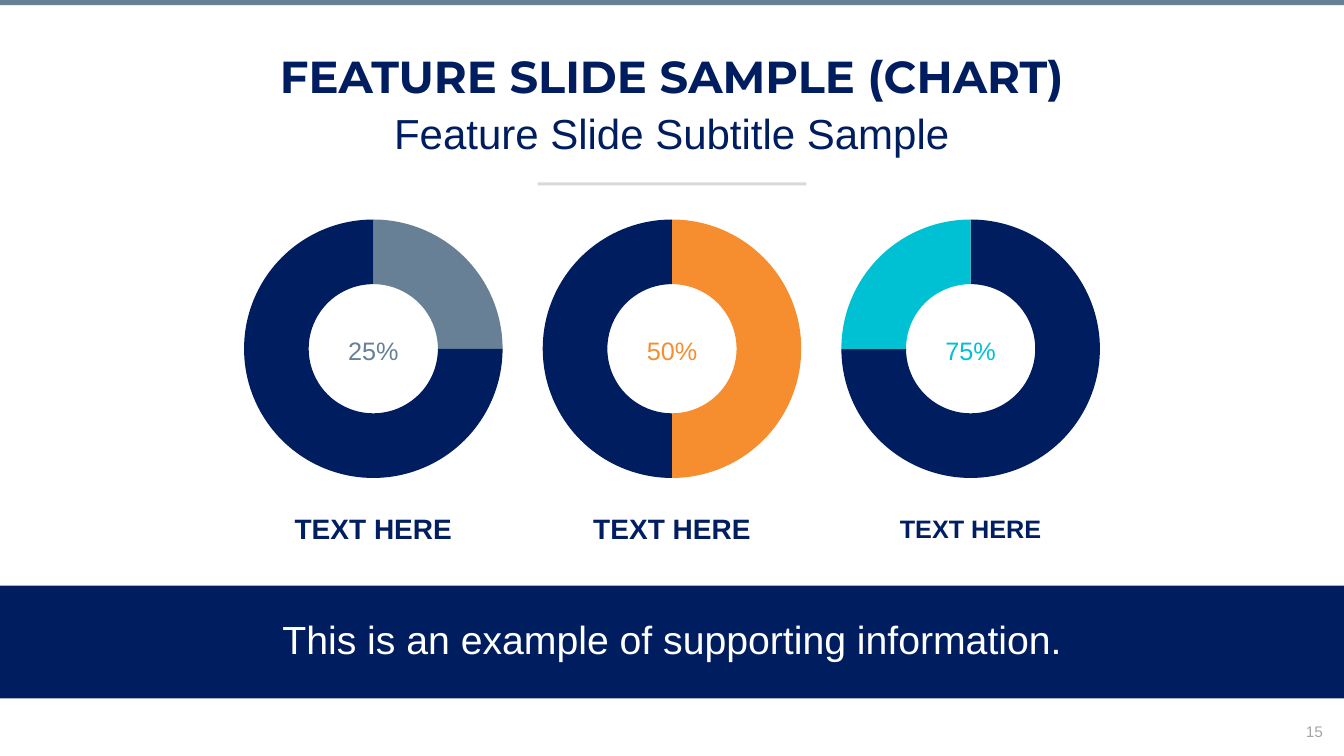
from pptx import Presentation
from pptx.chart.data import CategoryChartData
from pptx.dml.color import RGBColor
from pptx.enum.chart import XL_CHART_TYPE
from pptx.enum.shapes import MSO_SHAPE
from pptx.enum.text import MSO_ANCHOR, PP_ALIGN
from pptx.util import Inches, Pt

DOUGHNUT = XL_CHART_TYPE.DOUGHNUT
RECTANGLE = MSO_SHAPE.RECTANGLE
TOP, MIDDLE = MSO_ANCHOR.TOP, MSO_ANCHOR.MIDDLE
CENTER, RIGHT = PP_ALIGN.CENTER, PP_ALIGN.RIGHT

WIDTH, HEIGHT = 13.33, 7.5
COLUMN = WIDTH / 4.5
FIRST_CENTER = 1.25 * COLUMN
CHART_TOP, CHART_WIDTH, CHART_HEIGHT = 1.32, 2.84, 4.28
HOLE_PERCENT = 35

COLORS = {
    "navy": "001D5F",
    "label": "001E61",
    "slate": "688096",
    "orange": "F68D2E",
    "cyan": "00C1D4",
    "rule": "D9D9D9",
    "number": "A6A6A6",
    "white": "FFFFFF",
    "black": "000000",
}

# Values, slice colours, accent of the percentage, label size
DOUGHNUTS = [
    ((25, 75), ("slate", "navy"), "slate", 20),
    ((50, 50), ("orange", "navy"), "orange", 20),
    ((75, 25), ("navy", "cyan"), "cyan", 18),
]


def color(name):
    return RGBColor.from_string(COLORS[name])


def inches(box):
    return [Inches(length) for length in box]


def centered(center, top, width, height):
    return center - width / 2, top, width, height


def set_font(font, color_name, **values):
    for name, value in {"name": "Arial", **values}.items():
        setattr(font, name, value)
    font.color.rgb = color(color_name)


def write(shape, text, size, color_name, anchor=MIDDLE, bold=False,
          font_name="Arial", **paragraph_format):
    frame = shape.text_frame
    frame.word_wrap = True
    frame.vertical_anchor = anchor
    paragraph = frame.paragraphs[0]
    for name, value in {"alignment": CENTER, **paragraph_format}.items():
        setattr(paragraph, name, value)
    run = paragraph.add_run()
    run.text = text
    set_font(run.font, color_name, name=font_name, size=Pt(size), bold=bold)


def add_text(slide, box, text, size, color_name, **style):
    write(slide.shapes.add_textbox(*inches(box)), text, size, color_name, **style)


def add_bar(slide, box, color_name):
    bar = slide.shapes.add_shape(RECTANGLE, *inches(box))
    bar.shadow.inherit = False
    bar.fill.solid()
    bar.fill.fore_color.rgb = color(color_name)
    bar.line.fill.background()
    return bar


def add_doughnut(slide, box, values, slice_colors):
    data = CategoryChartData()
    data.categories = ["1", "2"]
    data.add_series("Series 1", values)
    chart = slide.shapes.add_chart(DOUGHNUT, *inches(box), data).chart
    chart.has_legend = False
    chart.has_title = False
    set_font(chart.font, "black", size=Pt(10))
    plot = chart.plots[0]
    plot.has_data_labels = False
    plot.vary_by_categories = True
    for index, name in enumerate(slice_colors):
        slice_format = plot.series[0].points[index].format
        slice_format.fill.solid()
        slice_format.fill.fore_color.rgb = color(name)
        slice_format.line.fill.background()
    for hole in chart.element.xpath(".//c:holeSize"):
        hole.set("val", str(HOLE_PERCENT))


def main():
    presentation = Presentation()
    presentation.slide_width = Inches(WIDTH)
    presentation.slide_height = Inches(HEIGHT)
    slide = presentation.slides.add_slide(presentation.slide_layouts[6])

    add_text(slide, (9.2, 7.11, 4.02, 0.29), "15", 11, "number",
             anchor=TOP, alignment=RIGHT)
    add_bar(slide, centered(WIDTH / 2, 1.81, WIDTH / 5, 0.03), "rule")
    add_bar(slide, (0, 0, WIDTH, 0.05), "slate")

    for index, (values, slices, accent, label_size) in enumerate(DOUGHNUTS):
        center = FIRST_CENTER + index * COLUMN
        add_doughnut(slide, centered(center, CHART_TOP, CHART_WIDTH, CHART_HEIGHT),
                     values, slices)
        add_text(slide, centered(center, 3.28, 0.93, 0.4),
                 f"{values[0]}%", 18, accent)
        add_text(slide, centered(center, 5.02, 2.1, 0.44),
                 "TEXT HERE", label_size, "label", bold=True)

    add_text(slide, centered(WIDTH / 2, 0.49, 12.24, 0.77),
             "FEATURE SLIDE SAMPLE (CHART)", 32, "navy", anchor=TOP, bold=True,
             font_name="Montserrat", line_spacing=0.9)
    add_text(slide, centered(WIDTH / 2, 1.07, 12.24, 0.77),
             "Feature Slide Subtitle Sample", 30, "navy", anchor=TOP,
             line_spacing=0.9)
    banner = add_bar(slide, (0, 5.81, WIDTH, 1.12), "navy")
    write(banner, "This is an example of supporting information.", 28, "white",
          line_spacing=0.9)

    presentation.save("out.pptx")


if __name__ == "__main__":
    main()
